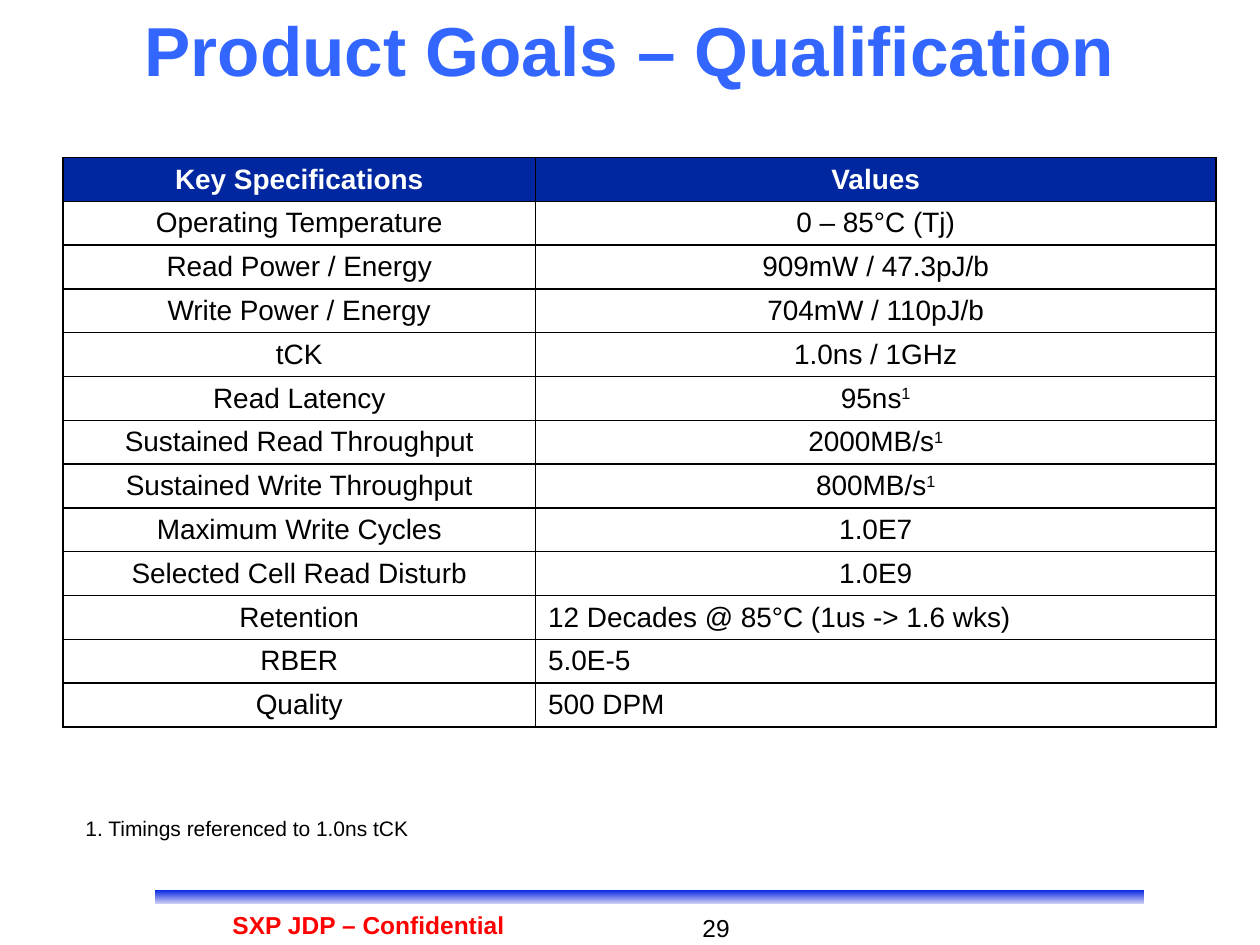
from dataclasses import dataclass

from lxml import etree
from pptx import Presentation
from pptx.dml.color import RGBColor
from pptx.enum.shapes import MSO_SHAPE
from pptx.enum.text import MSO_ANCHOR, PP_ALIGN
from pptx.oxml.ns import qn
from pptx.util import Inches, Pt

RECTANGLE = MSO_SHAPE.RECTANGLE
LEFT, CENTER, RIGHT = PP_ALIGN.LEFT, PP_ALIGN.CENTER, PP_ALIGN.RIGHT
TOP, MIDDLE = MSO_ANCHOR.TOP, MSO_ANCHOR.MIDDLE


@dataclass(frozen=True)
class Theme:
    font: str = "Arial"
    title: str = "3366FF"
    header: str = "00279F"
    text: str = "000000"
    white: str = "FFFFFF"
    warning: str = "FF0000"
    bar_start: str = "0020E0"
    bar_end: str = "DADAF6"
    title_size: float = 39.6
    table_size: float = 16
    footer_size: float = 14
    note_size: float = 12


THEME = Theme()


@dataclass(frozen=True)
class Label:
    text: str
    left: float
    top: float
    width: float
    height: float
    size: float
    color: str = THEME.text
    bold: bool = False
    align: PP_ALIGN = LEFT
    anchor: MSO_ANCHOR = TOP


@dataclass(frozen=True)
class Specification:
    name: str
    value: str
    footnote: str = ""
    align: PP_ALIGN = CENTER


LABELS = [
    Label("Product Goals – Qualification", 0.5, 0.08, 9, 0.62,
          THEME.title_size, THEME.title, True, CENTER, MIDDLE),
    Label("1. Timings referenced to 1.0ns tCK", 0.58, 6.42, 4, 0.3, THEME.note_size),
    Label("29", 4.75, 7.2, 1.14, 0.27, THEME.footer_size, align=RIGHT),
    Label("SXP JDP – Confidential", 1.33, 7.17, 3.19, 0.26,
          THEME.footer_size, THEME.warning, True, CENTER),
]

SPECIFICATIONS = [
    Specification("Operating Temperature", "0 – 85°C (Tj)"),
    Specification("Read Power / Energy", "909mW / 47.3pJ/b"),
    Specification("Write Power / Energy", "704mW / 110pJ/b"),
    Specification("tCK", "1.0ns / 1GHz"),
    Specification("Read Latency", "95ns", "1"),
    Specification("Sustained Read Throughput", "2000MB/s", "1"),
    Specification("Sustained Write Throughput", "800MB/s", "1"),
    Specification("Maximum Write Cycles", "1.0E7"),
    Specification("Selected Cell Read Disturb", "1.0E9"),
    Specification("Retention", "12 Decades @ 85°C (1us -> 1.6 wks)", align=LEFT),
    Specification("RBER", "5.0E-5", align=LEFT),
    Specification("Quality", "500 DPM", align=LEFT),
]


def add_run(paragraph, text: str, size: float, color: str, bold: bool = False,
            superscript: bool = False) -> None:
    run = paragraph.add_run()
    run.text = text
    run.font.name = THEME.font
    run.font.size = Pt(size)
    run.font.bold = bold
    run.font.color.rgb = RGBColor.from_string(color)
    if superscript:
        run._r.get_or_add_rPr().set("baseline", "30000")


def add_label(slide, label: Label) -> None:
    shape = slide.shapes.add_textbox(Inches(label.left), Inches(label.top),
                                     Inches(label.width), Inches(label.height))
    frame = shape.text_frame
    frame.word_wrap = True
    frame.vertical_anchor = label.anchor
    paragraph = frame.paragraphs[0]
    paragraph.alignment = label.align
    add_run(paragraph, label.text, label.size, label.color, label.bold)


def add_bar(slide) -> None:
    bar = slide.shapes.add_shape(RECTANGLE, Inches(1.22), Inches(7.06),
                                 Inches(7.87), Inches(0.12))
    bar.shadow.inherit = False
    bar.fill.gradient()
    bar.fill.gradient_angle = 270
    for stop, position, color in zip(bar.fill.gradient_stops, (0, 1),
                                     (THEME.bar_start, THEME.bar_end)):
        stop.position = position
        stop.color.rgb = RGBColor.from_string(color)
    bar.line.color.rgb = RGBColor.from_string(THEME.white)
    bar.line.width = Pt(1)


def add_borders(cell) -> None:
    properties = cell._tc.get_or_add_tcPr()
    for side in ("a:lnL", "a:lnR", "a:lnT", "a:lnB"):
        line = etree.SubElement(properties, qn(side), w=str(Pt(1)))
        fill = etree.SubElement(line, qn("a:solidFill"))
        etree.SubElement(fill, qn("a:srgbClr"), val=THEME.text)


def fill_cell(cell, text: str, align: PP_ALIGN, footnote: str = "",
              header: bool = False) -> None:
    add_borders(cell)
    cell.fill.solid()
    cell.fill.fore_color.rgb = RGBColor.from_string(THEME.header if header else THEME.white)
    cell.vertical_anchor = MIDDLE
    cell.margin_top = cell.margin_bottom = Inches(0.04)
    paragraph = cell.text_frame.paragraphs[0]
    paragraph.alignment = align
    color = THEME.white if header else THEME.text
    add_run(paragraph, text, THEME.table_size, color, header)
    if footnote:
        add_run(paragraph, footnote, THEME.table_size, color, superscript=True)


def add_specification_table(slide) -> None:
    row_count = len(SPECIFICATIONS) + 1
    table = slide.shapes.add_table(row_count, 2, Inches(0.5), Inches(1.25),
                                   Inches(9.15), Inches(4.52)).table
    table.horz_banding = False
    table.columns[0].width = Inches(3.75)
    table.columns[1].width = Inches(5.4)
    for column, heading in enumerate(("Key Specifications", "Values")):
        fill_cell(table.cell(0, column), heading, CENTER, header=True)
    for row, item in enumerate(SPECIFICATIONS, start=1):
        fill_cell(table.cell(row, 0), item.name, CENTER)
        fill_cell(table.cell(row, 1), item.value, item.align, item.footnote)


def main() -> None:
    presentation = Presentation()
    presentation.slide_width = Inches(10)
    presentation.slide_height = Inches(7.5)
    slide = presentation.slides.add_slide(presentation.slide_layouts[6])

    # Footer bar behind the content
    add_bar(slide)
    # Specifications
    add_specification_table(slide)
    # Title, footnote, page number and confidentiality mark
    for label in LABELS:
        add_label(slide, label)

    presentation.save("out.pptx")


if __name__ == "__main__":
    main()
